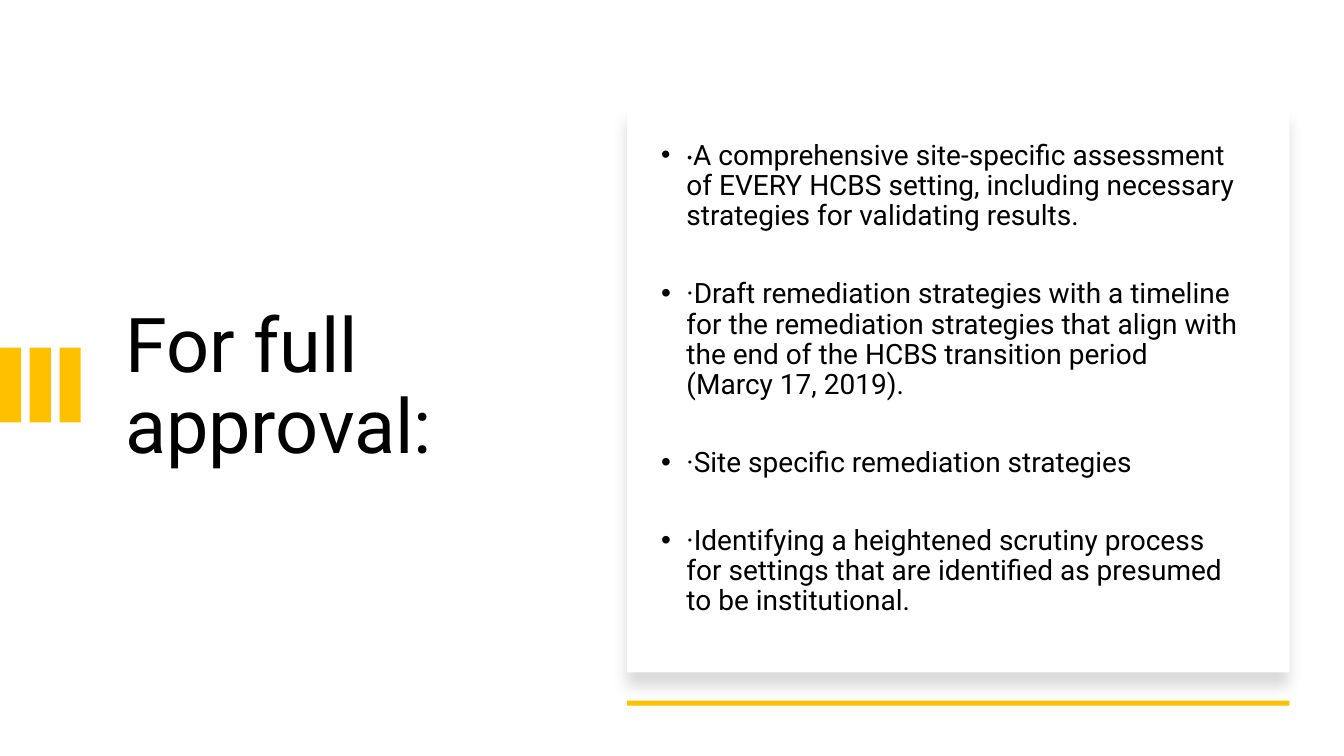
from dataclasses import dataclass

from lxml import etree
from pptx import Presentation
from pptx import util as u
from pptx.dml.color import RGBColor
from pptx.enum import shapes, text
from pptx.oxml import ns


@dataclass(frozen=True)
class Theme:
    ink: RGBColor = RGBColor(0, 0, 0)
    paper: RGBColor = RGBColor(255, 255, 255)
    accent: RGBColor = RGBColor(0xFF, 0xC0, 0x00)
    font: str = "Roboto"
    dot_font: str = "Calibri"
    title_size: int = 54
    body_size: int = 20
    dot_size: int = 19


@dataclass(frozen=True)
class Box:
    left: float
    top: float
    width: float
    height: float

    def emu(self) -> tuple:
        return tuple(u.Inches(v) for v in (self.left, self.top, self.width, self.height))


@dataclass(frozen=True)
class Item:
    words: str
    dot_font: str
    dot_size: int


THEME = Theme()
TITLE = Box(1.14, 1.5, 4.26, 4.71)
CARD = Box(6.22, 1.07, 6.57, 5.6)
BODY = Box(6.33, 1.07, 6.05, 5.38)
UNDERLINE = Box(6.22, 6.95, 6.57, 0.05)
BARS = [Box(0.295 * i, 3.45, 0.21, 0.74) for i in range(3)]
ITEMS = [
    Item("A comprehensive site-specific assessment of EVERY HCBS setting, "
         "including necessary strategies for validating results.",
         THEME.dot_font, THEME.dot_size),
    Item("Draft remediation strategies with a timeline for the remediation strategies "
         "that align with the end of the HCBS transition period (Marcy 17, 2019).",
         THEME.font, THEME.body_size),
    Item("Site specific remediation strategies", THEME.font, THEME.body_size),
    Item("Identifying a heightened scrutiny process for settings that are identified "
         "as presumed to be institutional.", THEME.font, THEME.body_size),
]


def add_rect(s, box: Box, fill: RGBColor):
    sp = s.shapes.add_shape(shapes.MSO_SHAPE.RECTANGLE, *box.emu())
    sp.shadow.inherit = False
    sp.fill.solid()
    sp.fill.fore_color.rgb = fill
    sp.line.fill.background()
    return sp


def add_shadow(sp) -> None:
    effects = sp._element.spPr.find(ns.qn("a:effectLst"))
    shadow = etree.SubElement(effects, ns.qn("a:outerShdw"), blurRad=str(u.Pt(11)),
                              dist=str(u.Pt(10)), dir="5400000", algn="t", rotWithShape="0")
    color = etree.SubElement(shadow, ns.qn("a:srgbClr"), val=str(THEME.ink))
    etree.SubElement(color, ns.qn("a:alpha"), val="15000")


def add_run(p, words: str, font: str, size: int) -> None:
    r = p.add_run()
    r.text = words
    r.font.name = font
    r.font.size = u.Pt(size)
    r.font.color.rgb = THEME.ink


def add_bullet(p) -> None:
    pPr = p._p.get_or_add_pPr()
    pPr.set("marL", str(u.Inches(0.38)))
    pPr.set("indent", str(u.Inches(-0.25)))
    etree.SubElement(pPr, ns.qn("a:buFont"), typeface="Arial")
    etree.SubElement(pPr, ns.qn("a:buChar"), char="•")


def set_title(s) -> None:
    sp = s.shapes.title
    sp.left, sp.top, sp.width, sp.height = TITLE.emu()
    tf = sp.text_frame
    tf.word_wrap = True
    tf.auto_size = text.MSO_AUTO_SIZE.NONE
    tf.vertical_anchor = text.MSO_ANCHOR.MIDDLE
    p = tf.paragraphs[0]
    p.alignment = text.PP_ALIGN.LEFT
    p.line_spacing = 0.9
    add_run(p, "For full approval:", THEME.font, THEME.title_size)


def add_items(s) -> None:
    tf = s.shapes.add_textbox(*BODY.emu()).text_frame
    tf.word_wrap = True
    tf.vertical_anchor = text.MSO_ANCHOR.MIDDLE
    for i, item in enumerate(ITEMS):
        p = tf.add_paragraph() if i else tf.paragraphs[0]
        add_bullet(p)
        p.line_spacing = 0.9
        p.space_before = u.Pt(28 if i else 0)
        p.space_after = u.Pt(6)
        add_run(p, "·", item.dot_font, item.dot_size)
        add_run(p, item.words, THEME.font, THEME.body_size)


def main() -> None:
    prs = Presentation()
    prs.slide_width, prs.slide_height = u.Inches(13.33), u.Inches(7.5)
    s = prs.slides.add_slide(prs.slide_layouts[5])
    set_title(s)
    for bar in BARS:
        add_rect(s, bar, THEME.accent)
    add_shadow(add_rect(s, CARD, THEME.paper))
    add_items(s)
    add_rect(s, UNDERLINE, THEME.accent)
    prs.save("out.pptx")


if __name__ == "__main__":
    main()
